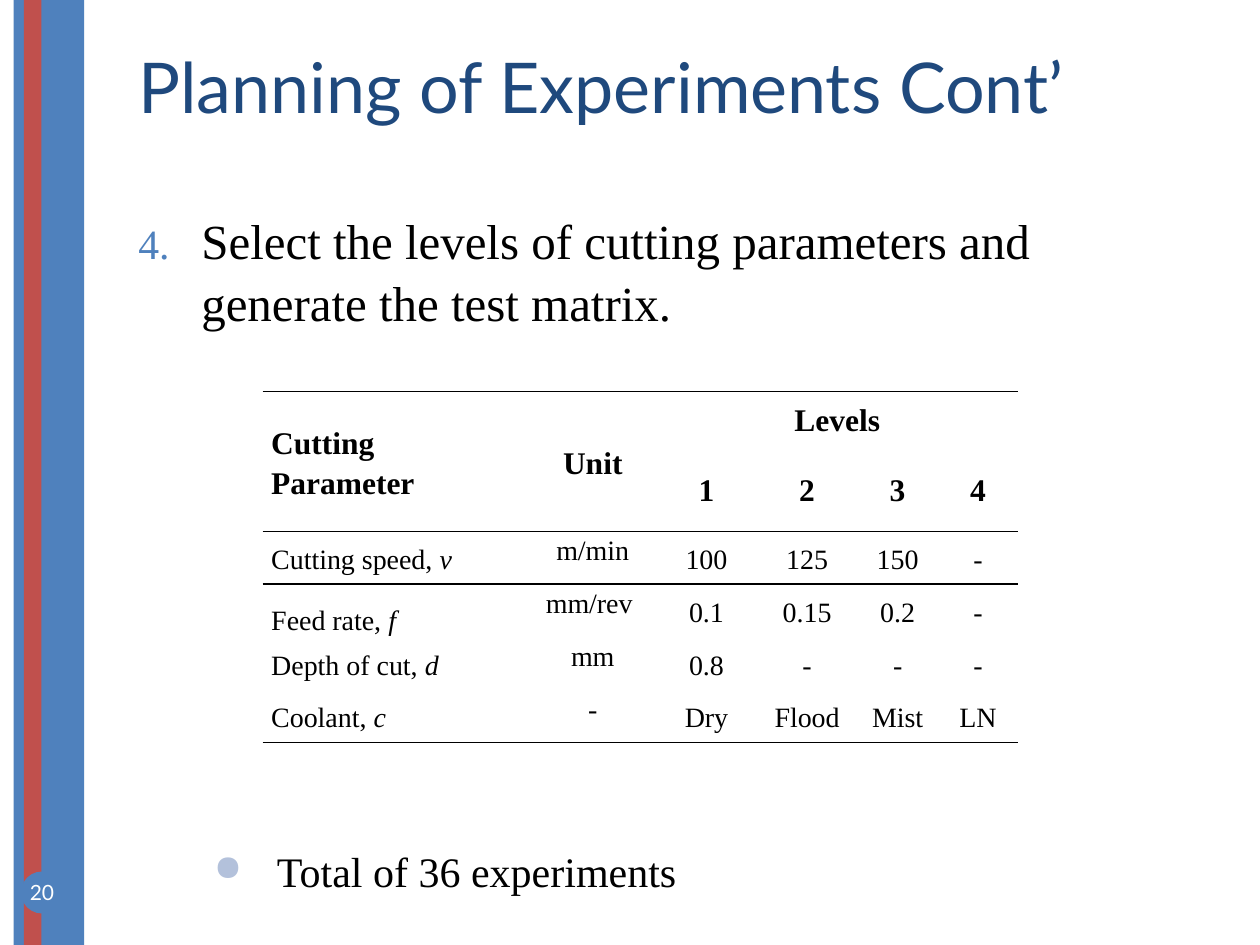
from lxml import etree
from pptx import Presentation
from pptx.dml.color import RGBColor
from pptx.enum.shapes import MSO_SHAPE
from pptx.enum.text import MSO_ANCHOR, PP_ALIGN
from pptx.oxml.ns import qn
from pptx.util import Pt

RECTANGLE, OVAL = MSO_SHAPE.RECTANGLE, MSO_SHAPE.OVAL
TOP, MIDDLE, BOTTOM = MSO_ANCHOR.TOP, MSO_ANCHOR.MIDDLE, MSO_ANCHOR.BOTTOM
LEFT, CENTER, JUSTIFY = PP_ALIGN.LEFT, PP_ALIGN.CENTER, PP_ALIGN.JUSTIFY

COLORS = {
    "blue": "4F81BD",
    "red": "C0504D",
    "title": "1F497D",
    "bullet": "B3C1DB",
    "black": "000000",
    "white": "FFFFFF",
}
HEADING_FONT, BODY_FONT = "Lato", "Times New Roman"
NO_STYLE_NO_GRID = "{2D5ABB26-0587-4C30-8999-92F81FD0307C}"

COLUMN_WIDTHS = [152.5, 72.5, 57.5, 57.5, 46, 46]
ROW_HEIGHTS = [30.2, 39.6] + [30.2] * 4
PARAMETERS = [
    ("Cutting speed, ", "v", "m/min", ["100", "125", "150", "-"]),
    ("Feed rate, ", "f", "mm/rev ", ["0.1", "0.15", "0.2", "-"]),
    ("Depth of cut, ", "d", "mm", ["0.8", "-", "-", "-"]),
    ("Coolant, ", "c", "-", ["Dry", "Flood", "Mist", "LN"]),
]


def color(name):
    return RGBColor.from_string(COLORS[name])


def add_run(paragraph, text, size, font=BODY_FONT, fill="black", bold=False, italic=False):
    run = paragraph.add_run()
    run.text = text
    run.font.name = font
    run.font.size = Pt(size)
    run.font.bold = bold
    run.font.italic = italic
    run.font.color.rgb = color(fill)


def add_filled_shape(slide, kind, box, fill):
    shape = slide.shapes.add_shape(kind, *map(Pt, box))
    shape.shadow.inherit = False
    shape.fill.solid()
    shape.fill.fore_color.rgb = color(fill)
    shape.line.fill.background()
    return shape


def add_text_box(slide, box):
    """Add a wrapping text box and return its first paragraph."""
    text_frame = slide.shapes.add_textbox(*map(Pt, box)).text_frame
    text_frame.word_wrap = True
    return text_frame.paragraphs[0]


def add_side_band(slide, left, top, width, height):
    add_filled_shape(slide, RECTANGLE, (left, top, width, height), "blue")
    add_filled_shape(slide, RECTANGLE, (left + 5.8, top, 10.1, height), "red")


def add_page_number(slide, box, number):
    shape = add_filled_shape(slide, OVAL, box, "blue")
    text_frame = shape.text_frame
    text_frame.word_wrap = False
    text_frame.vertical_anchor = MIDDLE
    text_frame.margin_left = text_frame.margin_right = 0
    text_frame.margin_top = text_frame.margin_bottom = 0
    paragraph = text_frame.paragraphs[0]
    paragraph.alignment = CENTER
    add_run(paragraph, number, 12, HEADING_FONT, "white")


def add_title(slide, box, text):
    add_run(add_text_box(slide, box), text, 40, HEADING_FONT, "title")


def add_list_item(slide, box, text, size, indent, marker, marker_color):
    """Add a hanging list item; marker is a bullet character or a start number."""
    paragraph = add_text_box(slide, box)
    paragraph.line_spacing = 1.05
    properties = paragraph._p.get_or_add_pPr()
    properties.set("marL", str(Pt(indent)))
    properties.set("indent", str(Pt(-36)))
    marker_fill = etree.SubElement(properties, qn("a:buClr"))
    etree.SubElement(marker_fill, qn("a:srgbClr"), val=COLORS[marker_color])
    etree.SubElement(properties, qn("a:buSzPct"), val="85000")
    if isinstance(marker, int):
        etree.SubElement(properties, qn("a:buAutoNum"), type="arabicPeriod", startAt=str(marker))
    else:
        etree.SubElement(properties, qn("a:buChar"), char=marker)
    add_run(paragraph, text, size)


def add_border(cell, edge):
    """Draw a thin black rule on an edge: lnT or lnB."""
    line = etree.SubElement(cell._tc.get_or_add_tcPr(), qn("a:" + edge), w=str(Pt(1)))
    fill = etree.SubElement(line, qn("a:solidFill"))
    etree.SubElement(fill, qn("a:srgbClr"), val=COLORS["black"])


def fill_cell(cell, runs, size, bold=False, alignment=CENTER, anchor=MIDDLE, before=0, after=0):
    """Write (text, italic) runs into a cell."""
    cell.vertical_anchor = anchor
    paragraph = cell.text_frame.paragraphs[0]
    paragraph.alignment = alignment
    paragraph.line_spacing = 1.15
    paragraph.space_before, paragraph.space_after = Pt(before), Pt(after)
    for text, italic in runs:
        add_run(paragraph, text, size, bold=bold, italic=italic)


def add_levels_table(slide, left, top):
    frame = slide.shapes.add_table(
        len(ROW_HEIGHTS), len(COLUMN_WIDTHS), Pt(left), Pt(top),
        Pt(sum(COLUMN_WIDTHS)), Pt(sum(ROW_HEIGHTS)))
    table = frame.table
    table.first_row = table.horz_banding = False
    table._tbl.tblPr.find(qn("a:tableStyleId")).text = NO_STYLE_NO_GRID
    for column, width in zip(table.columns, COLUMN_WIDTHS):
        column.width = Pt(width)
    for row, height in zip(table.rows, ROW_HEIGHTS):
        row.height = Pt(height)

    last_row = len(ROW_HEIGHTS) - 1
    for row_index, row in enumerate(table.rows):
        for column_index, cell in enumerate(row.cells):
            cell.margin_left = cell.margin_right = Pt(5)
            cell.margin_top = cell.margin_bottom = 0
            spans_header = row_index == 0 and column_index < 2
            if row_index in (0, 2):
                add_border(cell, "lnT")
            if row_index in (1, last_row) or spans_header:
                add_border(cell, "lnB")
            cell.fill.background()

    for column_index in (0, 1):
        table.cell(0, column_index).merge(table.cell(1, column_index))
    table.cell(0, 2).merge(table.cell(0, 5))
    headings = [(0, 0, "Cutting Parameter"), (0, 1, "Unit"), (0, 2, "Levels")]
    headings += [(1, level + 1, str(level)) for level in range(1, 5)]
    for row_index, column_index, text in headings:
        alignment = CENTER if column_index else LEFT
        fill_cell(table.cell(row_index, column_index), [(text, False)], 18, True, alignment)

    for row_index, (name, symbol, unit, levels) in enumerate(PARAMETERS, 2):
        anchor = BOTTOM if symbol == "f" else MIDDLE
        fill_cell(table.cell(row_index, 0), [(name, False), (symbol, True)], 16,
                  alignment=JUSTIFY, anchor=anchor, before=6, after=6)
        for column_index, text in enumerate([unit] + levels, 1):
            anchor = TOP if column_index == 1 else MIDDLE
            fill_cell(table.cell(row_index, column_index), [(text, False)], 16,
                      anchor=anchor, before=18, after=6)


def main():
    presentation = Presentation()
    presentation.slide_width, presentation.slide_height = Pt(720), Pt(540)
    slide = presentation.slides.add_slide(presentation.slide_layouts[6])
    add_side_band(slide, 7.8, 0, 40.3, 540)
    add_title(slide, (72, 21.6, 612, 90), "Planning of Experiments Cont’")
    add_page_number(slide, (12, 498, 24, 24), "20")
    add_list_item(slide, (72, 115, 612, 80),
                  "Select the levels of cutting parameters and generate the test matrix.",
                  28, 36, 4, "blue")
    add_levels_table(slide, 150, 223.7)
    add_list_item(slide, (72, 478, 612, 36), "Total of 36 experiments", 24, 79.2, "●", "bullet")
    presentation.save("out.pptx")


if __name__ == "__main__":
    main()
